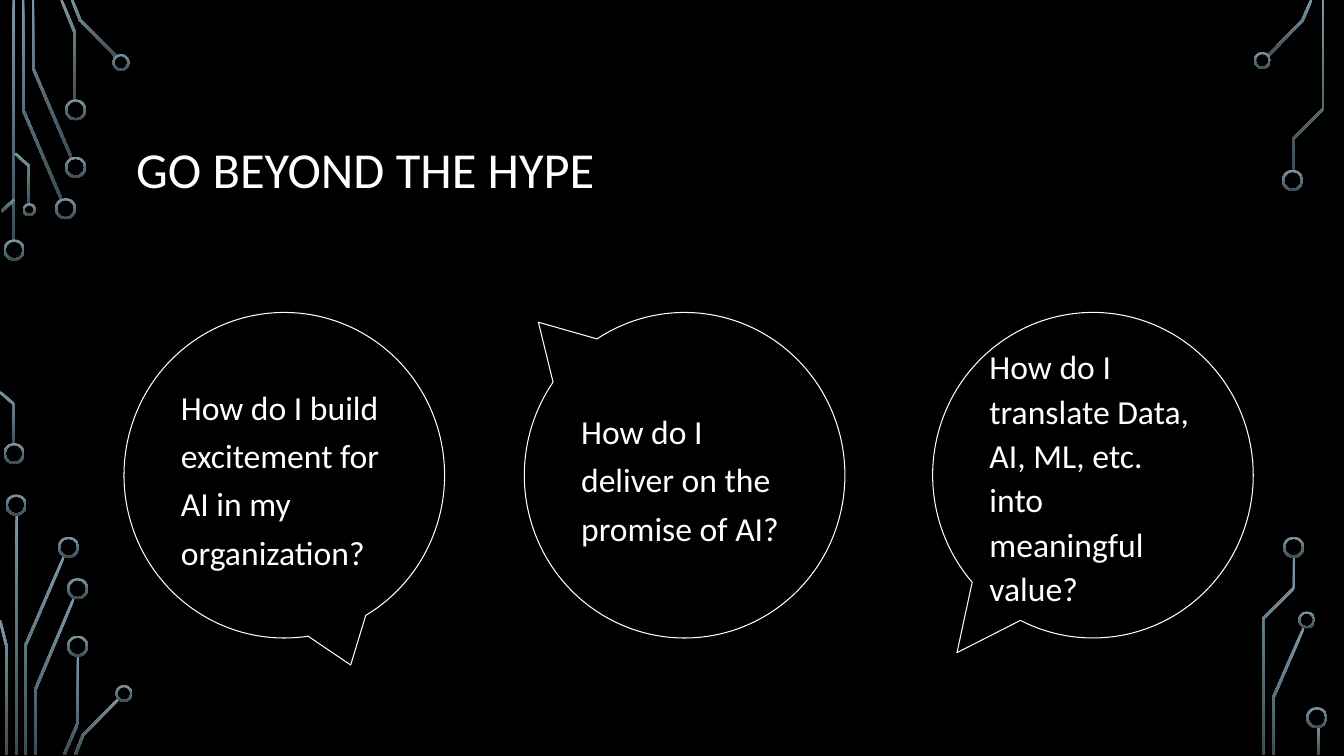
from math import hypot

from lxml import etree
from pptx import Presentation
from pptx.dml.color import RGBColor
from pptx.enum.shapes import MSO_SHAPE
from pptx.enum.text import MSO_ANCHOR, MSO_AUTO_SIZE, PP_ALIGN
from pptx.util import Inches, Pt

DONUT, CALLOUT = MSO_SHAPE.DONUT, MSO_SHAPE.OVAL_CALLOUT
MIDDLE, LEFT, NO_FIT = MSO_ANCHOR.MIDDLE, PP_ALIGN.LEFT, MSO_AUTO_SIZE.NONE
WHITE, BLACK, STEEL, SLATE = "FFFFFF", "000000", "7C96A3", "3B4C54"
TRACE, RIM = 0.025, 0.02

CIRCUITS = [
    ((0, 0),
     [[(0.135, 0), (0.135, 2.4)],
      [(0.23, 0), (0.23, 1.09), (0.61, 1.98)],
      [(0.325, 0), (0.325, 0.67), (0.71, 1.57)],
      [(0.61, 0), (0.745, 0.33), (0.745, 1)],
      [(0.715, 0), (0.795, 0.2), (1.16, 0.57)],
      [(0.015, 2.1), (0.14, 1.98)],
      [(0, 3.89), (0.14, 4.01), (0.14, 4.41)],
      [(0.15, 1.52), (0.29, 1.65), (0.29, 2.03)]],
     [(0.14, 2.48, 0.21), (0.14, 4.5, 0.21), (0.65, 2.07, 0.21),
      (0.75, 1.66, 0.21), (0.75, 1.09, 0.21), (1.2, 0.62, 0.17),
      (0.29, 2.08, 0.13)]),
    ((0, 4.9),
     [[(0.165, 0.2), (0.165, 2.59)],
      [(0.255, 2.59), (0.255, 1.5), (0.635, 0.62)],
      [(0, 1.25), (0.065, 1.51), (0.065, 2.59)],
      [(0.355, 2.59), (0.355, 1.93), (0.735, 1.03)],
      [(0.635, 2.59), (0.775, 2.27), (0.775, 1.6)],
      [(0.745, 2.59), (0.825, 2.39), (1.18, 2.03)]],
     [(0.16, 0.11, 0.21), (0.68, 0.53, 0.21), (0.77, 0.94, 0.21),
      (0.77, 1.51, 0.21), (1.23, 1.98, 0.17)]),
    ((12.4, 0),
     [[(0.17, 0.56), (0.52, 0.2), (0.605, 0)],
      [(0.425, 1.69), (0.425, 1.38), (0.725, 1.08), (0.725, 0)]],
     [(0.12, 0.6, 0.17), (0.42, 1.79, 0.21)]),
    ((12.4, 5.3),
     [[(0.225, 2.19), (0.225, 1.63), (0.53, 0.93)],
      [(0.125, 2.19), (0.125, 0.84), (0.435, 0.53), (0.435, 0.22)],
      [(0.675, 1.91), (0.675, 2.19)]],
     [(0.56, 0.85, 0.17), (0.43, 0.13, 0.21), (0.66, 1.82, 0.21)]),
]

BUBBLES = [
    (1.23, (0.207, 0.583), 1.2, "How do I build excitement for AI in my organization?"),
    (5.2, (-0.456, -0.47), 1.2, "How do I deliver on the promise of AI?"),
    (9.25, (-0.424, 0.545), 1.1,
     "How do I translate Data, AI, ML, etc. into meaningful value?"),
]


def rgb(value):
    """Turn a hex string into a colour."""
    return RGBColor.from_string(value)


def set_all(target, values):
    """Set every attribute in a dict of format values."""
    for name, value in values.items():
        setattr(target, name, value)


def write(sp, text, size, spacing):
    """Write one left-aligned white paragraph into a shape."""
    tf = sp.text_frame
    set_all(tf, {"word_wrap": True, "auto_size": NO_FIT, "vertical_anchor": MIDDLE})
    p = tf.paragraphs[0]
    set_all(p, {"alignment": LEFT, "line_spacing": spacing, "space_before": Pt(0)})
    r = p.add_run()
    r.text = text
    set_all(r.font, {"name": "Calibri", "size": Pt(size), "bold": False})
    r.font.color.rgb = rgb(WHITE)


def shade(sp):
    """Give a circuit part its vertical gradient without an outline."""
    sp.shadow.inherit = False
    sp.line.fill.background()
    sp.fill.gradient()
    sp.fill.gradient_angle = 270
    for stop, colour in zip(sp.fill.gradient_stops, (STEEL, SLATE)):
        stop.color.rgb = rgb(colour)


def edge(points, offset):
    """Return a polyline shifted sideways, with mitred corners."""
    normals = []
    for (x1, y1), (x2, y2) in zip(points, points[1:]):
        length = hypot(x2 - x1, y2 - y1)
        normals.append(((y1 - y2) / length, (x2 - x1) / length))
    shifted = []
    for (x, y), (ax, ay), (bx, by) in zip(
            points, normals[:1] + normals, normals + normals[-1:]):
        k = offset / (1 + ax * bx + ay * by)
        shifted.append((Inches(x + k * (ax + bx)), Inches(y + k * (ay + by))))
    return shifted


def add_circuit(slide, origin, traces, rings):
    """Draw the traces and ring ends of one corner."""
    left, top = origin
    for trace in traces:
        points = [(left + x, top + y) for x, y in trace]
        outline = edge(points, TRACE / 2) + edge(points, -TRACE / 2)[::-1]
        builder = slide.shapes.build_freeform(*outline[0])
        builder.add_line_segments(outline[1:], close=True)
        shade(builder.convert_to_shape())
    for x, y, d in rings:
        box = (left + x - d / 2, top + y - d / 2, d, d)
        sp = slide.shapes.add_shape(DONUT, *map(Inches, box))
        sp.adjustments[0] = RIM / d
        shade(sp)


def add_title(slide, box, text):
    """Place the slide title."""
    sp = slide.shapes.title
    set_all(sp, dict(zip(("left", "top", "width", "height"), map(Inches, box))))
    write(sp, text, 36, 0.9)


def add_bubble(slide, box, tail, spacing, text):
    """Draw one outlined speech bubble with its question."""
    sp = slide.shapes.add_shape(CALLOUT, *map(Inches, box))
    sp.shadow.inherit = False
    sp.fill.background()
    sp.line.color.rgb = rgb(WHITE)
    sp.line.width = Pt(0.75)
    for i, value in enumerate(tail):
        sp.adjustments[i] = value
    write(sp, text, 24, spacing)


def main():
    """Build and save the slide."""
    prs = Presentation()
    set_all(prs, {"slide_width": Inches(13.33), "slide_height": Inches(7.5)})
    slide = prs.slides.add_slide(prs.slide_layouts[5])
    fill = slide.background.fill
    fill.solid()
    fill.fore_color.rgb = rgb(BLACK)
    for origin, traces, rings in CIRCUITS:
        add_circuit(slide, origin, traces, rings)
    add_title(slide, (1.25, 0.67, 10.83, 2.08), "GO BEYOND THE HYPE")
    for left, tail, spacing, text in BUBBLES:
        add_bubble(slide, (left, 3.1, 3.18, 3.23), tail, spacing, text)
    prs.save("out.pptx")


if __name__ == "__main__":
    main()
